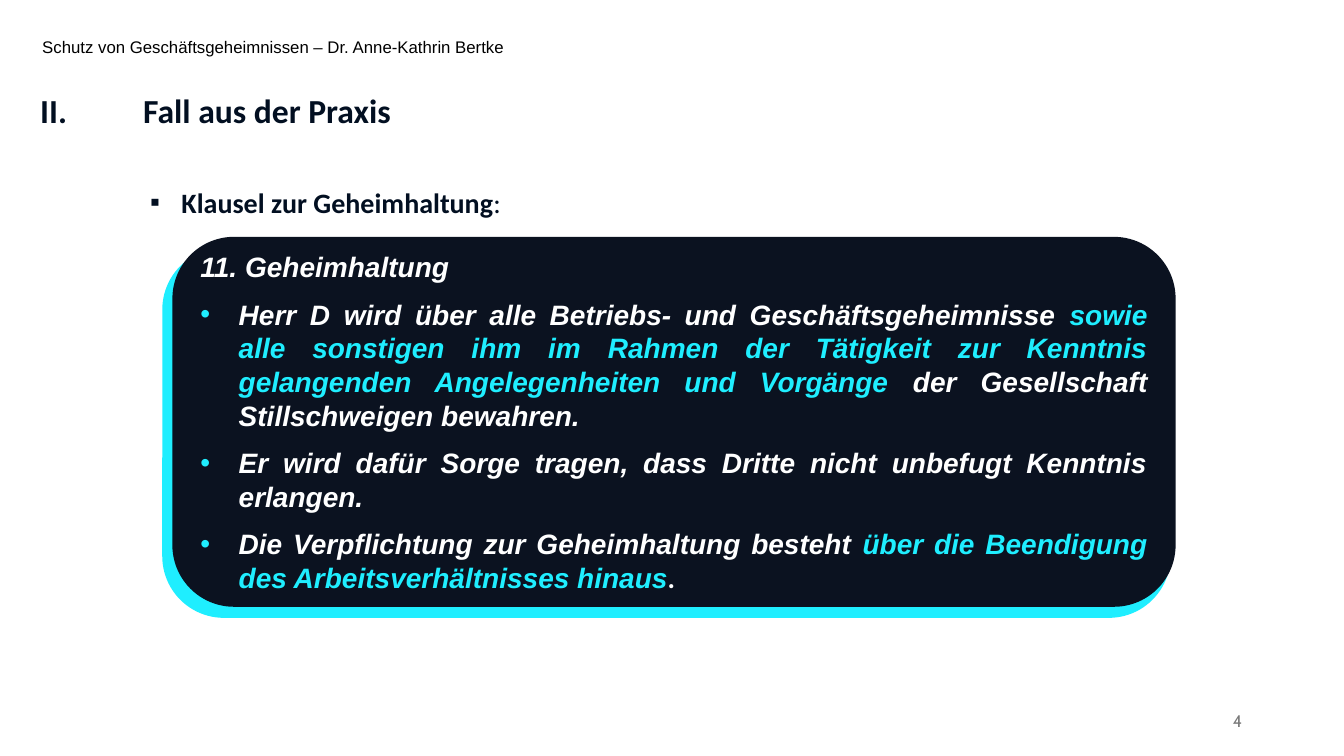
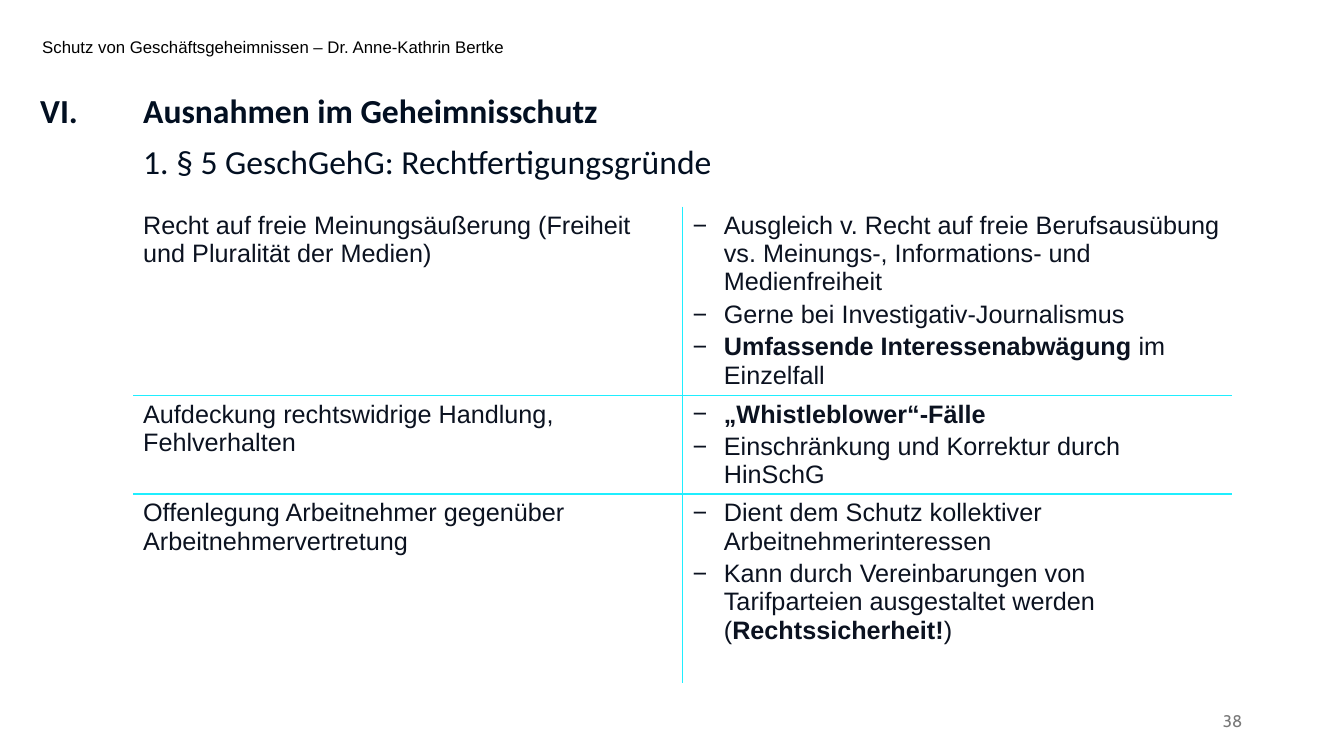
import pptx
import pptx.util
import pptx.dml.color
import pptx.enum.shapes
import pptx.enum.text
import pptx.oxml
import pptx.oxml.ns

Inches, Pt = pptx.util.Inches, pptx.util.Pt
ALIGN = pptx.enum.text.PP_ALIGN
ANCHOR = pptx.enum.text.MSO_ANCHOR

COLORS = {
    "heading": "020F21",
    "dark": "0B1220",
    "accent": "1FEEFF",
    "light": "FFFFFF",
    "header": "000000",
    "page": "797979",
}
HEADER = "Schutz von Geschäftsgeheimnissen – Dr. Anne-Kathrin Bertke"
HEADING = {"size": 24, "font": "Calibri", "color": "heading", "line_spacing": 0.9}
TITLE_TOP, TITLE_HEIGHT = 0.89, 0.53
CONTENT_LEFT = 1.32
PLAIN_TABLE_STYLE = "{2D5ABB26-0587-4C30-8999-92F81FD0307C}"

BOLD = {"bold": True}
ACCENT = {"color": "accent"}

CLAUSE_HEADING = "11. Geheimhaltung"
CLAUSE_ITEMS = [
    [("Herr D wird über alle Betriebs- und Geschäftsgeheimnisse ", {}),
     ("sowie alle sonstigen ihm im Rahmen der Tätigkeit zur Kenntnis gelangenden "
      "Angelegenheiten und Vorgänge ", ACCENT),
     ("der Gesellschaft Stillschweigen bewahren.", {})],
    [("Er wird dafür Sorge tragen, dass Dritte nicht unbefugt Kenntnis erlangen.", {})],
    [("Die Verpflichtung zur Geheimhaltung besteht ", {}),
     ("über die Beendigung des Arbeitsverhältnisses hinaus", ACCENT),
     (".", {"font": "Calibri"})],
]

# Each row: height, ground of justification, notes on it
GROUNDS = [
    (1.87, "Recht auf freie Meinungsäußerung (Freiheit und Pluralität der Medien)",
     [[("Ausgleich v. Recht auf freie Berufsausübung vs. Meinungs-, Informations- "
        "und Medienfreiheit", {})],
      [("Gerne bei Investigativ-Journalismus", {})],
      [("Umfassende Interessenabwägung ", BOLD), ("im Einzelfall", {})]]),
    (0.98, "Aufdeckung rechtswidrige Handlung, Fehlverhalten",
     [[("„Whistleblower“-Fälle", BOLD)],
      [("Einschränkung und Korrektur durch HinSchG", {})]]),
    (1.87, "Offenlegung Arbeitnehmer gegenüber Arbeitnehmervertretung",
     [[("Dient dem Schutz kollektiver Arbeitnehmerinteressen", {})],
      [("Kann durch Vereinbarungen von Tarifparteien ausgestaltet werden (", {}),
       ("Rechtssicherheit!", BOLD), (")", {})]]),
]


def rgb(name):
    return pptx.dml.color.RGBColor.from_string(COLORS[name])


def add_xml(parent, tag, children="", **attributes):
    listed = "".join(f' {key}="{value}"' for key, value in attributes.items())
    namespace = pptx.oxml.ns.nsdecls("a")
    parent.append(pptx.oxml.parse_xml(
        f"<a:{tag} {namespace}{listed}>{children}</a:{tag}>"))


def add_bullet(paragraph, char, indent, color):
    properties = paragraph._p.get_or_add_pPr()
    properties.set("marL", str(Inches(indent)))
    properties.set("indent", str(-Inches(indent)))
    add_xml(properties, "buClr", f'<a:srgbClr val="{COLORS[color]}"/>')
    add_xml(properties, "buFont", typeface="Arial")
    add_xml(properties, "buChar", char=char)


def add_text(frame, text, size=18, font="Arial", color="dark", bold=False, italic=False,
             align=ALIGN.LEFT, line_spacing=1.0, before=0, after=0,
             bullet=None, indent=0, bullet_color=None):
    """Add a paragraph; text is a string or a list of (string, format changes)."""
    paragraph = frame.paragraphs[-1]
    if paragraph.runs:
        paragraph = frame.add_paragraph()
    paragraph.alignment = align
    paragraph.line_spacing = line_spacing
    paragraph.space_before, paragraph.space_after = Pt(before), Pt(after)
    if bullet:
        add_bullet(paragraph, bullet, indent, bullet_color or color)
    base = {"size": size, "font": font, "color": color, "bold": bold, "italic": italic}
    for words, changes in [(text, {})] if isinstance(text, str) else text:
        look = {**base, **changes}
        run = paragraph.add_run()
        run.text = words
        run.font.size, run.font.name = Pt(look["size"]), look["font"]
        run.font.bold, run.font.italic = look["bold"], look["italic"]
        run.font.color.rgb = rgb(look["color"])


def prepare_frame(shape, anchor=ANCHOR.TOP):
    frame = shape.text_frame
    frame.word_wrap = True
    frame.auto_size = pptx.enum.text.MSO_AUTO_SIZE.NONE
    frame.vertical_anchor = anchor
    return frame


def place_placeholder(placeholder, left, top, width, height):
    placeholder.left, placeholder.top = Inches(left), Inches(top)
    placeholder.width, placeholder.height = Inches(width), Inches(height)
    return prepare_frame(placeholder)


def add_label(slide, box, text, anchor=ANCHOR.TOP, **look):
    label = slide.shapes.add_textbox(*map(Inches, box))
    add_text(prepare_frame(label, anchor), text, **look)


def add_base_slide(deck, layout, numeral, title, page, subtitle=None):
    """Add a slide with running header, numbered title and page number."""
    slide = deck.slides.add_slide(deck.slide_layouts.get_by_name(layout))
    title_frame = place_placeholder(
        slide.shapes.title, CONTENT_LEFT, TITLE_TOP, 11.47,
        2 * TITLE_HEIGHT if subtitle else TITLE_HEIGHT)
    add_text(title_frame, title, bold=True, **HEADING)
    if subtitle:
        add_text(title_frame, subtitle, before=10, **HEADING)
    add_label(slide, (0.3, TITLE_TOP, 1.02, TITLE_HEIGHT), numeral, bold=True, **HEADING)
    add_label(slide, (0.32, 0.34, 6.15, 0.24), HEADER,
              size=12, color="header", line_spacing=0.9)
    add_label(slide, (9.42, 6.95, 3, 0.4), str(page), anchor=ANCHOR.MIDDLE,
              size=12, font="Cabin", color="page", align=ALIGN.RIGHT)
    return slide


def add_rounded_panel(slide, left, top, width, height, fill):
    panel = slide.shapes.add_shape(
        pptx.enum.shapes.MSO_SHAPE.ROUNDED_RECTANGLE,
        Inches(left), Inches(top), Inches(width), Inches(height))
    panel.shadow.inherit = False
    panel.fill.solid()
    panel.fill.fore_color.rgb = rgb(fill)
    panel.line.fill.background()
    return panel


def add_clause_panel(slide, left, top, width, height):
    """Add the quoted clause on a dark panel with an offset accent panel behind."""
    add_rounded_panel(slide, left - 0.1, top + 0.11, width + 0.05, height, "accent")
    frame = prepare_frame(
        add_rounded_panel(slide, left, top, width, height, "dark"), ANCHOR.MIDDLE)
    look = {"size": 20, "color": "light", "bold": True, "italic": True,
            "align": ALIGN.JUSTIFY, "after": 10}
    add_text(frame, CLAUSE_HEADING, **look)
    for item in CLAUSE_ITEMS:
        add_text(frame, item, bullet="•", indent=0.38, bullet_color="accent", **look)


def style_cell(cell, edges):
    """Clear the cell's fill and draw accent lines on the given edges (of LRTB)."""
    properties = cell._tc.get_or_add_tcPr()
    for edge in "LRTB":
        if edge in edges:
            line = f'<a:solidFill><a:srgbClr val="{COLORS["accent"]}"/></a:solidFill>'
        else:
            line = "<a:noFill/>"
        add_xml(properties, f"ln{edge}", line, w=Pt(1))
    cell.fill.background()


def add_grounds_table(slide, left, top, width):
    total = sum(height for height, _, _ in GROUNDS)
    graphic = slide.shapes.add_table(
        len(GROUNDS), 2, Inches(left), Inches(top), Inches(width), Inches(total))
    table = graphic.table
    table.first_row = table.horz_banding = False
    table._tbl.tblPr.find(pptx.oxml.ns.qn("a:tableStyleId")).text = PLAIN_TABLE_STYLE
    for index, (height, ground, notes) in enumerate(GROUNDS):
        table.rows[index].height = Inches(height)
        ground_cell, notes_cell = table.rows[index].cells
        edges = ("T" if index else "") + ("B" if index < len(GROUNDS) - 1 else "")
        style_cell(ground_cell, edges + "R")
        style_cell(notes_cell, edges + "L")
        add_text(ground_cell.text_frame, ground)
        for note in notes:
            add_text(notes_cell.text_frame, note, after=3, bullet="−", indent=0.31)


def build_clause_slide(deck):
    slide = add_base_slide(deck, "Title and Content", "II.", "Fall aus der Praxis", 4)
    body = place_placeholder(slide.placeholders[1], 1.39, 1.72, 10.58, 0.6)
    add_text(body, [("Klausel zur Geheimhaltung", BOLD), (":", {})], size=20,
             font="Calibri", color="heading", line_spacing=1.2, bullet="▪", indent=0.31)
    add_clause_panel(slide, 1.71, 2.35, 9.95, 3.67)


def build_grounds_slide(deck):
    slide = add_base_slide(deck, "Title Only", "VI.", "Ausnahmen im Geheimnisschutz", 38,
                           subtitle="1. § 5 GeschGehG: Rechtfertigungsgründe")
    add_grounds_table(slide, CONTENT_LEFT, 2.05, 10.9)


def main():
    deck = pptx.Presentation()
    deck.slide_width, deck.slide_height = Inches(13.33), Inches(7.5)
    build_clause_slide(deck)
    build_grounds_slide(deck)
    deck.save("out.pptx")


if __name__ == "__main__":
    main()
